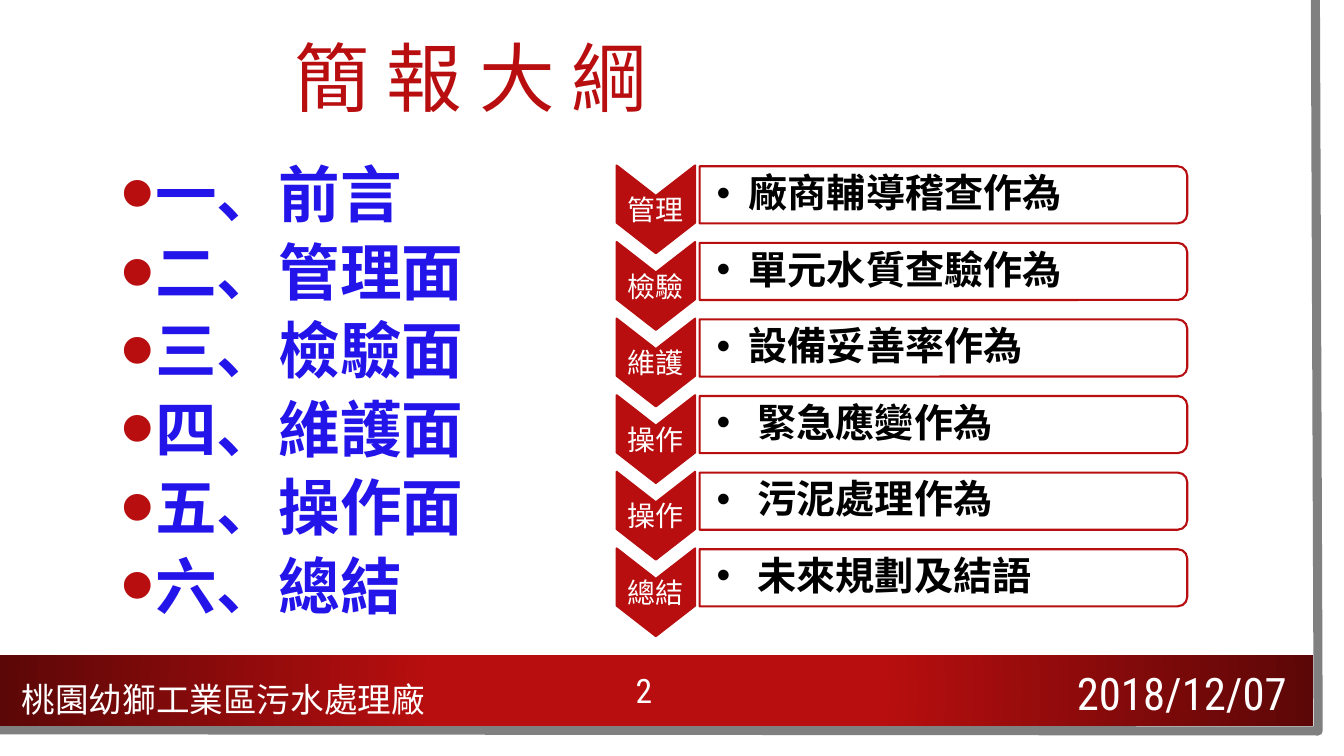
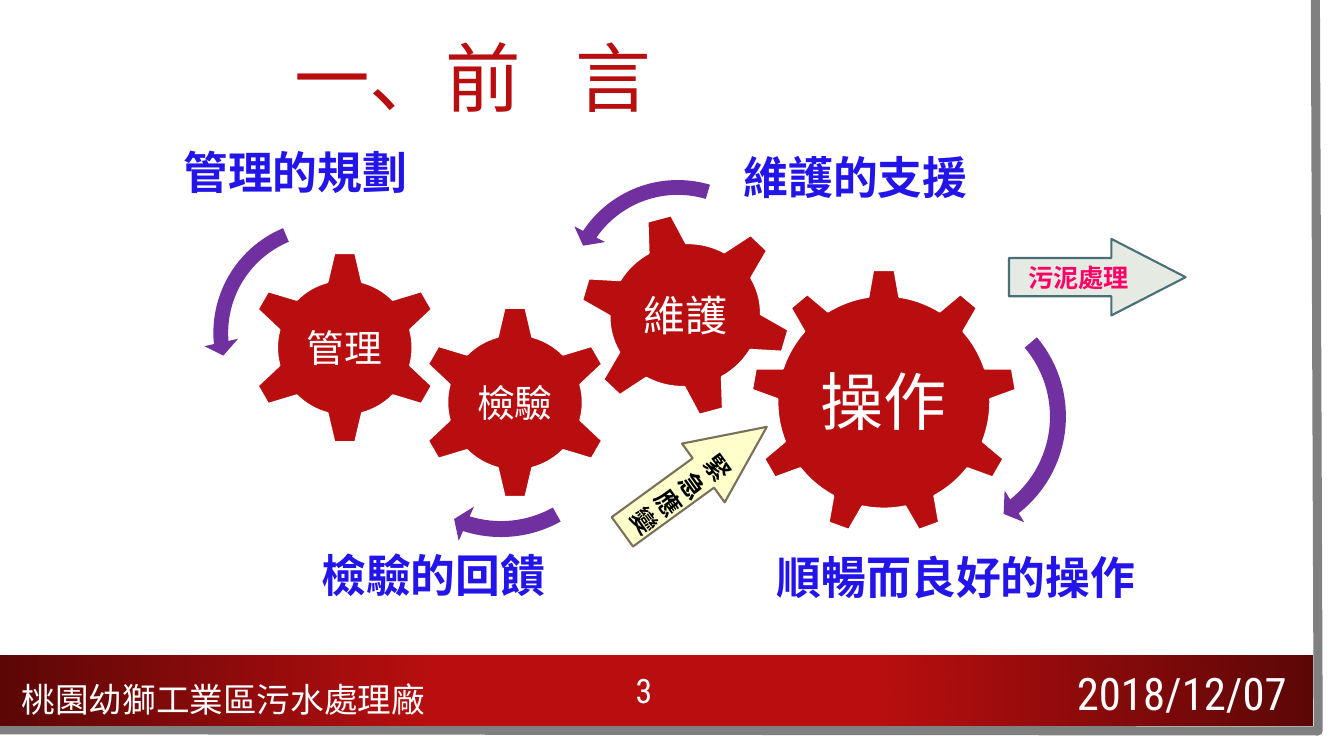
from lxml import etree
from pptx import Presentation
from pptx import util as u
from pptx.dml.color import RGBColor
from pptx.enum import shapes, text
from pptx.oxml.ns import qn

COLORS = {
    "red": "B80E0F", "dark red": "5C0707", "white": "FFFFFF", "black": "000000",
    "blue": "2314EA", "gray": "808080", "purple": "7030A0", "pink": "FF0066",
    "cream": "FFFFCC", "brown": "7B705C", "mist": "E5EBE3", "teal": "4A6F76",
}
LATIN, CJK = "Roboto Condensed", "Noto Sans CJK TC"
FORM = shapes.MSO_SHAPE
ALIGN = text.PP_ALIGN
ANCHOR = text.MSO_ANCHOR


def rgb(name):
    return RGBColor.from_string(COLORS[name])


def cm(*lengths):
    return [u.Cm(length) for length in lengths]


def add_bullet(para, indent, color=None, percent=None):
    props = para._p.get_or_add_pPr()
    props.set("marL", str(u.Cm(indent)))
    props.set("indent", str(-u.Cm(indent)))
    if color:
        holder = etree.SubElement(props, qn("a:buClr"))
        etree.SubElement(holder, qn("a:srgbClr"), val=COLORS[color])
    if percent:
        etree.SubElement(props, qn("a:buSzPct"), val=str(percent * 1000))
    etree.SubElement(props, qn("a:buFont"), typeface="Arial")
    etree.SubElement(props, qn("a:buChar"), char="•")


class Slides:
    """Holds the deck, its style and the current slide."""

    def __init__(self):
        self.deck = Presentation()
        self.deck.slide_width, self.deck.slide_height = cm(33.87, 19.05)
        self.page = None

    def new_page(self, layout, number):
        self.page = self.deck.slides.add_slide(self.deck.slide_layouts[layout])
        # Frame along the right and bottom edges
        edge = self.outline([(33.15, 0), (33.22, 18.42), (0, 18.39)], close=False)
        self.paint(edge, None, "gray", 6.5)
        # Footer band with a radial gradient
        band = self.shape(FORM.RECTANGLE, (0, 16.51, 33.1, 1.78), None)
        band.fill.gradient()
        stops = band.fill.gradient_stops
        for stop, position, color in zip(stops, (0.34, 1), ("red", "dark red")):
            stop.position, stop.color.rgb = position, rgb(color)
        gradient = band._element.spPr.find(qn("a:gradFill"))
        gradient.remove(gradient.find(qn("a:lin")))
        radial = etree.SubElement(gradient, qn("a:path"), {"path": "circle"})
        etree.SubElement(radial, qn("a:fillToRect"), l="50000", t="50000", r="50000", b="50000")
        # Footer texts
        self.label("桃園幼獅工業區污水處理廠", (0.3, 17.04, 10.69, 1.14), 24)
        self.label(str(number), (15.77, 16.76, 2.51, 1.4), 24, anchor=ANCHOR.TOP)
        self.label("2018/12/07", (22.17, 16.74, 10.52, 1.4), 32, align=ALIGN.RIGHT)

    def paint(self, shape, fill, line=None, width=1.5):
        shape.shadow.inherit = False
        if fill:
            shape.fill.solid()
            shape.fill.fore_color.rgb = rgb(fill)
        else:
            shape.fill.background()
        if line:
            shape.line.color.rgb = rgb(line)
            shape.line.width = u.Pt(width)
        else:
            shape.line.fill.background()

    def style(self, para, size, color, bold=False, align=ALIGN.LEFT):
        para.alignment = align
        font = para.font
        font.name, font.size, font.bold = LATIN, u.Pt(size), bold
        font.color.rgb = rgb(color)
        for span in para.runs:
            span.font.name = LATIN
            etree.SubElement(span._r.get_or_add_rPr(), qn("a:ea"), typeface=CJK)

    def put_text(self, shape, words, size, color, bold=False, align=ALIGN.CENTER,
                 anchor=ANCHOR.MIDDLE, wrap=False, inset=None):
        frame = shape.text_frame
        frame.word_wrap, frame.vertical_anchor = wrap, anchor
        if inset is not None:
            frame.margin_left = frame.margin_right = u.Cm(inset)
            frame.margin_top = frame.margin_bottom = 0
        para = frame.paragraphs[0]
        para.text = words
        self.style(para, size, color, bold, align)

    def shape(self, form, place, fill, line=None, turn=0, adjust=()):
        shape = self.page.shapes.add_shape(form, *cm(*place))
        shape.rotation = turn
        for index, value in enumerate(adjust):
            shape.adjustments[index] = value
        self.paint(shape, fill, line)
        return shape

    def outline(self, points, close=True):
        corners = [tuple(cm(*point)) for point in points]
        builder = self.page.shapes.build_freeform(*corners[0])
        builder.add_line_segments(corners[1:], close=close)
        return builder.convert_to_shape()

    def label(self, words, place, size, color="white", bold=False,
              align=ALIGN.LEFT, anchor=ANCHOR.MIDDLE, wrap=True):
        box = self.page.shapes.add_textbox(*cm(*place))
        self.put_text(box, words, size, color, bold, align, anchor, wrap)

    def place_holder(self, holder, place):
        holder.left, holder.top, holder.width, holder.height = cm(*place)
        frame = holder.text_frame
        frame.auto_size = text.MSO_AUTO_SIZE.NONE
        frame.vertical_anchor = ANCHOR.MIDDLE
        return frame

    def title(self, *spans, gap=0):
        """Sets the title; gap widens the blanks that stand alone."""
        frame = self.place_holder(self.page.shapes.title, (7.16, 0.89, 10.77, 2.34))
        para = frame.paragraphs[0]
        para.line_spacing = 0.9
        for words in spans:
            span = para.add_run()
            span.text = words
            if words == " ":
                span._r.get_or_add_rPr().set("spc", str(gap * 100))
        self.style(para, 54, "red")

    def body(self, items):
        frame = self.place_holder(self.page.placeholders[1], (2.79, 3.89, 10.92, 12.04))
        for index, words in enumerate(items):
            para = frame.add_paragraph() if index else frame.paragraphs[0]
            para.text = words
            para.line_spacing = u.Pt(46)
            para.space_before = u.Pt(10 if index else 0)
            add_bullet(para, 0.64, "red", 160)
            self.style(para, 44, "blue", True)

    def step(self, row, name, task, indent):
        """One chevron with its bar."""
        left, top, width, height, notch = 15.54, 4.17 + 1.93 * row, 1.98, 2.21, 0.77
        middle, right, bottom = left + width / 2, left + width, top + height
        chevron = self.outline([
            (left, top), (middle, top + notch), (right, top),
            (right, bottom - notch), (middle, bottom), (left, bottom - notch)])
        self.paint(chevron, "red", "red")
        self.put_text(chevron, name, 20, "white", inset=0)
        # The bar is an upright shape turned on its side
        left, top, length, thick = 17.63, top + 0.02, 12.29, 1.44
        shift = (length - thick) / 2
        self.shape(FORM.ROUND_2_SAME_RECTANGLE, (left + shift, top - shift, thick, length),
                   "white", "red", 90)
        box = self.page.shapes.add_textbox(*cm(left, top, length, thick))
        para = box.text_frame.paragraphs[0]
        add_bullet(para, indent)
        para.line_spacing = 0.9
        self.put_text(box, task, 28, "black", True, ALIGN.LEFT, wrap=True, inset=0.43)

    def gear(self, form, place, words, size, turn=0):
        gear = self.shape(form, place, "red", "white", turn)
        self.put_text(gear, words, size, "white", inset=0)
        if turn:  # keep the words level
            gear.text_frame._txBody.bodyPr.set("rot", str(-turn * 60000))


def main():
    slides = Slides()

    # Outline
    slides.new_page(1, 2)
    slides.title("簡 報 大 綱")
    slides.body(["一、前言", "二、管理面", "三、檢驗面", "四、維護面", "五、操作面", "六、總結"])
    steps = [
        ("管理", "廠商輔導稽查作為", 0.81), ("檢驗", "單元水質查驗作為", 0.81),
        ("維護", "設備妥善率作為", 0.81), ("操作", "緊急應變作為", 1.03),
        ("操作", "污泥處理作為", 1.03), ("總結", "未來規劃及結語", 1.03),
    ]
    for row, (name, task, indent) in enumerate(steps):
        slides.step(row, name, task, indent)

    # Foreword
    slides.new_page(5, 3)
    slides.title("一、前", " ", "言", gap=27)
    slides.gear(FORM.GEAR_9, (18.92, 6.78, 6.71, 6.71), "操作", 45)
    slides.gear(FORM.GEAR_6, (10.54, 7.7, 4.88, 4.88), "檢驗", 27)
    slides.gear(FORM.GEAR_6, (14.58, 5.36, 5.38, 5.16), "維護", 30, -15)
    slides.gear(FORM.GEAR_6, (6.25, 6.32, 4.88, 4.88), "管理", 27)

    # Curved arrows
    left_bend = (0.06, 4.3, 104.89, 148.38, 0.07)
    curves = [
        (FORM.LEFT_CIRCULAR_ARROW, 5.13, 5.28, 6.22, 0, left_bend),
        (FORM.CIRCULAR_ARROW, 9.27, 7.09, 6.71, 245.7, (0.06, 3.94, 133.14, 105.08, 0.07)),
        (FORM.LEFT_CIRCULAR_ARROW, 13.97, 4.29, 6.22, 39.2, left_bend),
        (FORM.CIRCULAR_ARROW, 20.42, 7.14, 6.71, 189.8, (0.06, 3.94, 133.14, 77.95, 0.07)),
    ]
    for form, left, top, size, turn, bend in curves:
        slides.shape(form, (left, top, size, size), "purple", turn=turn, adjust=bend)

    # Block arrows
    urgent = slides.shape(FORM.UP_ARROW, (16.59, 9.83, 1.83, 4.5), "cream", "brown", 54, (0.5, 1.08))
    slides.put_text(urgent, "緊急應變", 18, "black", True, wrap=True)
    sludge = slides.shape(FORM.RIGHT_ARROW, (25.43, 6.02, 4.45, 1.93), "mist", "teal", 0, (0.5, 0.97))
    slides.put_text(sludge, "污泥處理", 18, "pink", True, wrap=True)

    # Captions
    captions = [
        ("順暢而良好的操作", 19.33, 13.72, 9.63), ("維護的支援", 18.49, 3.66, 6.22),
        ("檢驗的回饋", 7.85, 13.67, 6.22), ("管理的規劃", 4.37, 3.51, 6.22),
    ]
    for words, left, top, width in captions:
        slides.label(words, (left, top, width, 1.63), 32, "blue", True,
                     anchor=ANCHOR.TOP, wrap=False)

    slides.deck.save("out.pptx")


if __name__ == "__main__":
    main()
